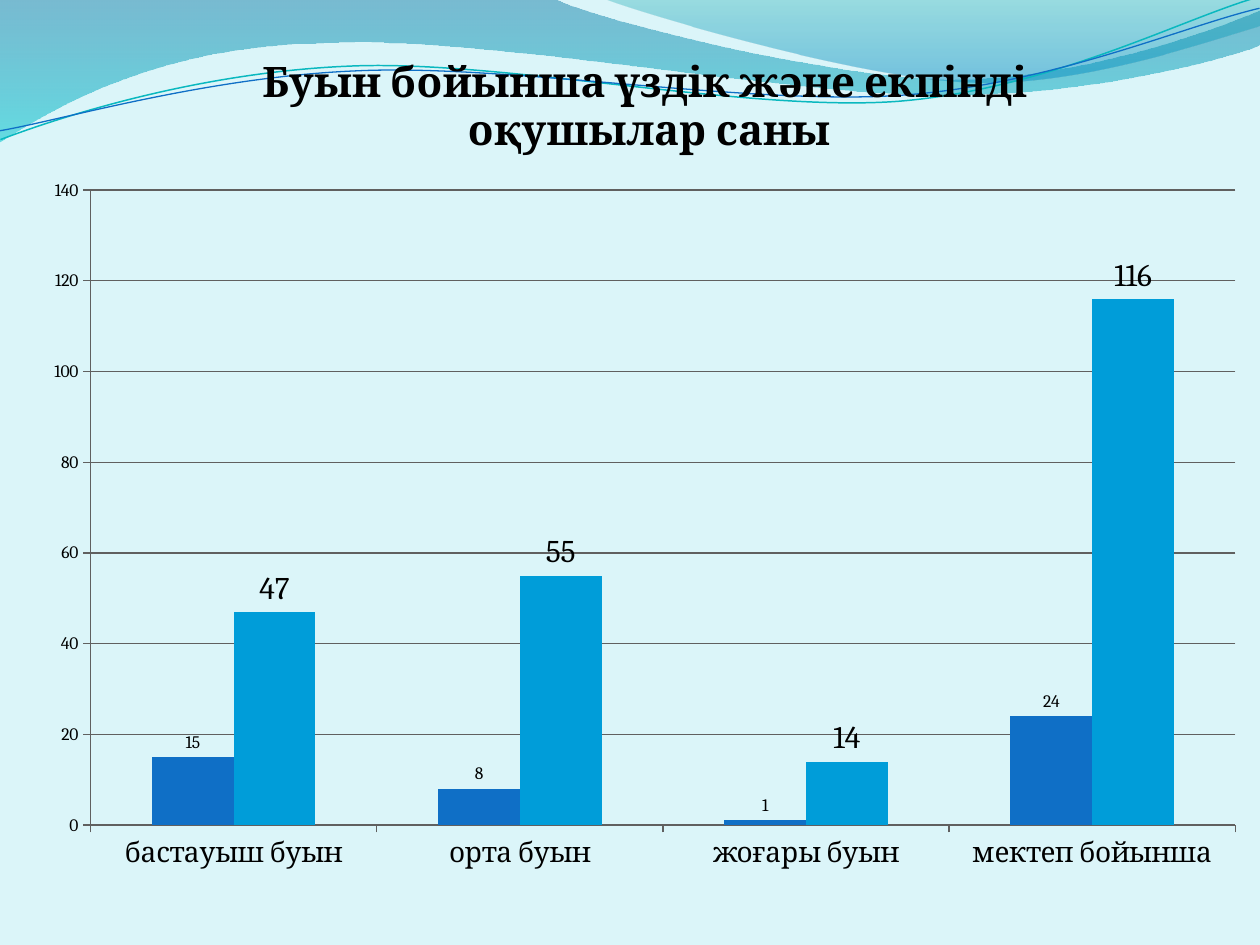
import lxml.etree
import pptx
import pptx.chart.data
import pptx.dml.color
import pptx.enum.chart
import pptx.oxml
import pptx.oxml.ns
import pptx.util

RGBColor = pptx.dml.color.RGBColor
qn = pptx.oxml.ns.qn
PX = 914400 / 126
BACKGROUND = RGBColor(0xDB, 0xF5, 0xF9)
BLACK = RGBColor(0, 0, 0)
GRID = RGBColor(0x60, 0x60, 0x60)
BLUE = RGBColor(0x0F, 0x6F, 0xC6)
SKY = RGBColor(0x00, 0x9D, 0xD9)
TEAL = RGBColor(0x0A, 0xB8, 0xBF)
FONT = "Cambria"


def px(value):
    return round(value * PX)


def add_wave(shapes, start, segments, close):
    """Draw straight (2 numbers) and cubic Bézier (6 numbers) segments, in px."""
    points = [pair for segment in segments for pair in zip(segment[::2], segment[1::2])]
    builder = shapes.build_freeform(*start, scale=PX)
    builder.add_line_segments(points, close=close)
    wave = builder.convert_to_shape()
    wave.shadow.inherit = False
    steps = iter(list(wave._element.spPr.iter(qn("a:lnTo"))))
    for segment in segments:
        first = next(steps)
        if len(segment) == 6:
            first.tag = qn("a:cubicBezTo")
            for _ in range(2):
                step = next(steps)
                first.append(step[0])
                step.getparent().remove(step)
    return wave


presentation = pptx.Presentation()
presentation.slide_width = px(1260)
presentation.slide_height = px(945)
slide = presentation.slides.add_slide(presentation.slide_layouts[6])
slide.background.fill.solid()
slide.background.fill.fore_color.rgb = BACKGROUND

# Translucent bands: start, segments, gradient stops (position, colour, opacity %)
bands = [
    ((0, 0),
     [(554, -1), (600, 21, 837, 79, 955, 79), (1075, 79, 1207, 33, 1260, 11),
      (1261, 45), (1239, 55, 1096, 96, 940, 95), (783, 95, 481, 35, 324, 43),
      (163, 45, 58, 105, -1, 142)],
     [(0, RGBColor(0x00, 0x74, 0xA1), 45), (1, RGBColor(0x00, 0xC6, 0xCF), 55)]),
    ((604, -1),
     [(641, 14, 859, 78, 969, 82), (1079, 87, 1211, 40, 1260, 26), (1260, 0)],
     [(0, RGBColor(0x00, 0xA1, 0xA9), 30), (0.8, RGBColor(0x00, 0x8B, 0xBF), 45)]),
]
for start, segments, stops in bands:
    band = add_wave(slide.shapes, start, segments, close=True)
    band.line.fill.background()
    band.fill.gradient()
    band.fill.gradient_angle = 270
    for stop, (position, color, _) in zip(band.fill.gradient_stops, stops):
        stop.position = position
        stop.color.rgb = color
    colors = band._element.spPr.iter(qn("a:srgbClr"))
    for color_element, (_, _, opacity) in zip(colors, stops):
        alpha = lxml.etree.SubElement(color_element, qn("a:alpha"))
        alpha.set("val", str(opacity * 1000))

# Thin wave lines, tilted together
wave_lines = [
    ((-2, 110), [(59, 90, 199, 52, 350, 53), (499, 53, 745, 118, 896, 114),
                 (1049, 109, 1184, 45, 1260, 27)], TEAL, 0.85),
    ((-2, 101), [(57, 94, 207, 57, 357, 58), (509, 58, 750, 112, 902, 108),
                 (1052, 104, 1186, 52, 1262, 38)], BLUE, 0.75),
]
line_group = slide.shapes.add_group_shape()
for start, segments, color, width in wave_lines:
    wave_line = add_wave(line_group.shapes, start, segments, close=False)
    wave_line.rotation = 357.3
    wave_line.fill.background()
    wave_line.line.color.rgb = color
    wave_line.line.width = pptx.util.Pt(width)

# Chart
chart_data = pptx.chart.data.CategoryChartData()
chart_data.categories = ["бастауыш буын", "орта буын", "жоғары буын", "мектеп бойынша"]
chart_data.add_series("Series 1", (15, 8, 1, 24))
chart_data.add_series("Series 2", (47, 55, 14, 116))
chart = slide.shapes.add_chart(
    pptx.enum.chart.XL_CHART_TYPE.COLUMN_CLUSTERED,
    px(29), px(29), px(1231), px(857), chart_data).chart
chart.has_legend = False
chart.font.name = FONT
chart.font.size = pptx.util.Pt(10)
chart.font.color.rgb = BLACK

chart.has_title = True
title_frame = chart.chart_title.text_frame
title_frame.text = "Буын бойынша үздік және екпінді\n оқушылар саны"
title_format = {"name": FONT, "size": pptx.util.Pt(24), "bold": True}
for paragraph in title_frame.paragraphs:
    for run in paragraph.runs:
        run.font.color.rgb = BLACK
        for name, value in title_format.items():
            setattr(run.font, name, value)
chart.chart_title.include_in_layout = False

value_axis = chart.value_axis
axis_format = {"minimum_scale": 0, "maximum_scale": 140, "major_unit": 20,
               "has_major_gridlines": True}
for name, value in axis_format.items():
    setattr(value_axis, name, value)
chart.category_axis.tick_labels.font.size = pptx.util.Pt(16)
for axis in (value_axis, chart.category_axis):
    axis.major_tick_mark = pptx.enum.chart.XL_TICK_MARK.OUTSIDE
for line_format in (value_axis.format, chart.category_axis.format,
                    value_axis.major_gridlines.format):
    line_format.line.color.rgb = GRID
    line_format.line.width = pptx.util.Pt(0.75)

plot = chart.plots[0]
plot.vary_by_categories = False
plot.gap_width = 150
plot.overlap = 0
for series, color, label_size in zip(plot.series, (BLUE, SKY), (10, 18)):
    series.format.fill.solid()
    series.format.fill.fore_color.rgb = color
    labels = series.data_labels
    labels.show_value = True
    labels.position = pptx.enum.chart.XL_LABEL_POSITION.OUTSIDE_END
    labels.font.size = pptx.util.Pt(label_size)

# Fixed plot area inside the axes, as shares of the chart
plot_area = chart._chartSpace.chart.plotArea
for old_layout in plot_area.findall(qn("c:layout")):
    plot_area.remove(old_layout)
plot_area.insert(0, pptx.oxml.parse_xml(
    f'<c:layout {pptx.oxml.ns.nsdecls("c")}><c:manualLayout>'
    '<c:layoutTarget val="inner"/><c:xMode val="edge"/><c:yMode val="edge"/>'
    '<c:x val="0.05"/><c:y val="0.188"/><c:w val="0.93"/><c:h val="0.741"/>'
    '</c:manualLayout></c:layout>'))

presentation.save("out.pptx")
